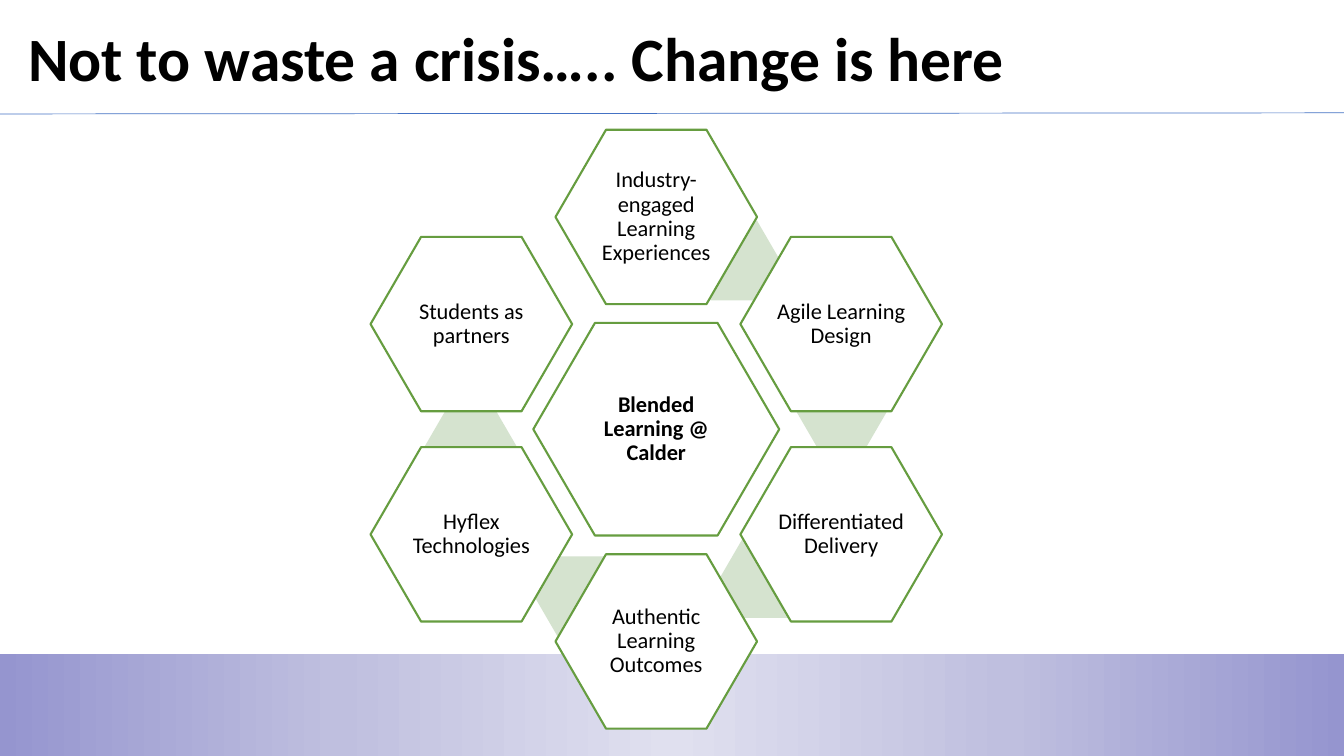
"""Build the slide on change in blended learning."""
from copy import deepcopy

from lxml import etree
from pptx import Presentation
from pptx.dml.color import RGBColor
from pptx.enum.shapes import MSO_CONNECTOR as Connector, MSO_SHAPE as Shape
from pptx.enum.text import MSO_ANCHOR as Anchor, PP_ALIGN as Align
from pptx.oxml.ns import qn
from pptx.util import Pt

WIDTH, HEIGHT = 960, 540
CENTER_X, CENTER_Y = 468.8, 306.6
COLUMN = 132.1
OUTER_ROW, INNER_ROW = 151.6, 75.1
BAND_TOP = 467.3
BAND_COLORS = ["9595CF", "BFBFDF", "E0E0EF"]

PETALS = [
    ("Industry-engaged Learning Experiences", 0, -OUTER_ROW, (524.2, 186.1)),
    ("Agile Learning Design", COLUMN, -INNER_ROW, (601.2, 292.7)),
    ("Differentiated Delivery", COLUMN, INNER_ROW, (547.2, 412.9)),
    ("Authentic Learning Outcomes", 0, OUTER_ROW, (414.7, 425.9)),
    ("Hyflex Technologies", -COLUMN, INNER_ROW, (336.2, 319.3)),
    ("Students as partners", -COLUMN, -INNER_ROW, None),
]


def color(value):
    return RGBColor.from_string(value)


class Painter:
    font = "Calibri"
    ink = "000000"
    paper = "FFFFFF"
    outline = "669D40"
    accent = "D5E3CF"
    rule = "4472C4"

    def __init__(self, page):
        self.shapes = page.shapes

    def set_text(self, box, text, size, bold, align, inset):
        frame = box.text_frame
        frame.word_wrap = True
        frame.vertical_anchor = Anchor.MIDDLE
        frame.margin_left = frame.margin_right = Pt(inset)
        frame.margin_top = frame.margin_bottom = Pt(inset)
        para = frame.paragraphs[0]
        para.text = text
        para.alignment = align
        para.line_spacing = 0.9
        para.font.name = self.font
        para.font.size = Pt(size)
        para.font.bold = bold
        para.font.color.rgb = color(self.ink)

    def title(self, text, left, top, width, height):
        box = self.shapes.add_textbox(Pt(left), Pt(top), Pt(width), Pt(height))
        self.set_text(box, text, 44, True, Align.LEFT, 7.2)

    def band(self, left, width, angle):
        band = self.shapes.add_shape(
            Shape.RECTANGLE, Pt(left), Pt(BAND_TOP), Pt(width), Pt(HEIGHT - BAND_TOP))
        band.shadow.inherit = False
        band.line.fill.background()
        band.fill.gradient()
        band.fill.gradient_angle = angle
        stop_list = band._element.spPr.find(".//" + qn("a:gsLst"))
        stop_list.insert(1, deepcopy(stop_list[0]))
        for index, stop in enumerate(band.fill.gradient_stops):
            stop.position = index / 2
            stop.color.rgb = color(BAND_COLORS[index])

    def line(self, start_x, start_y, end_x, end_y):
        line = self.shapes.add_connector(
            Connector.STRAIGHT, Pt(start_x), Pt(start_y), Pt(end_x), Pt(end_y))
        line.line.color.rgb = color(self.rule)
        line.line.width = Pt(0.5)
        etree.SubElement(line._element.spPr, qn("a:effectLst"))

    def hexagon(self, x, y, width, height, fill):
        hexagon = self.shapes.add_shape(
            Shape.HEXAGON, Pt(x - width / 2), Pt(y - height / 2), Pt(width), Pt(height))
        hexagon.shadow.inherit = False
        hexagon.adjustments[0] = 0.29
        hexagon.fill.solid()
        hexagon.fill.fore_color.rgb = color(fill)
        hexagon.line.fill.background()
        return hexagon

    def link(self, x, y):
        self.hexagon(x, y, 66.2, 56.9, self.accent)

    def cell(self, text, x, y, width, height, bold=False):
        cell = self.hexagon(x, y, width, height, self.paper)
        cell.line.color.rgb = color(self.outline)
        cell.line.width = Pt(1.5)
        self.set_text(cell, text, 16, bold, Align.CENTER, 1.6)


def main():
    deck = Presentation()
    deck.slide_width, deck.slide_height = Pt(WIDTH), Pt(HEIGHT)
    painter = Painter(deck.slides.add_slide(deck.slide_layouts[6]))

    painter.title("Not to waste a crisis….. Change is here", 13, -8, 828, 104.4)
    painter.band(0, WIDTH / 2, 0)
    painter.band(WIDTH / 2, WIDTH / 2, 180)
    painter.line(0, 81.4, WIDTH, 80.6)

    painter.cell("Blended Learning @ Calder", CENTER_X, CENTER_Y, 175.7, 151.9, bold=True)
    for text, shift_x, shift_y, link in PETALS:
        if link:
            painter.link(*link)
        painter.cell(text, CENTER_X + shift_x, CENTER_Y + shift_y, 144, 124.6)

    deck.save("out.pptx")


if __name__ == "__main__":
    main()
